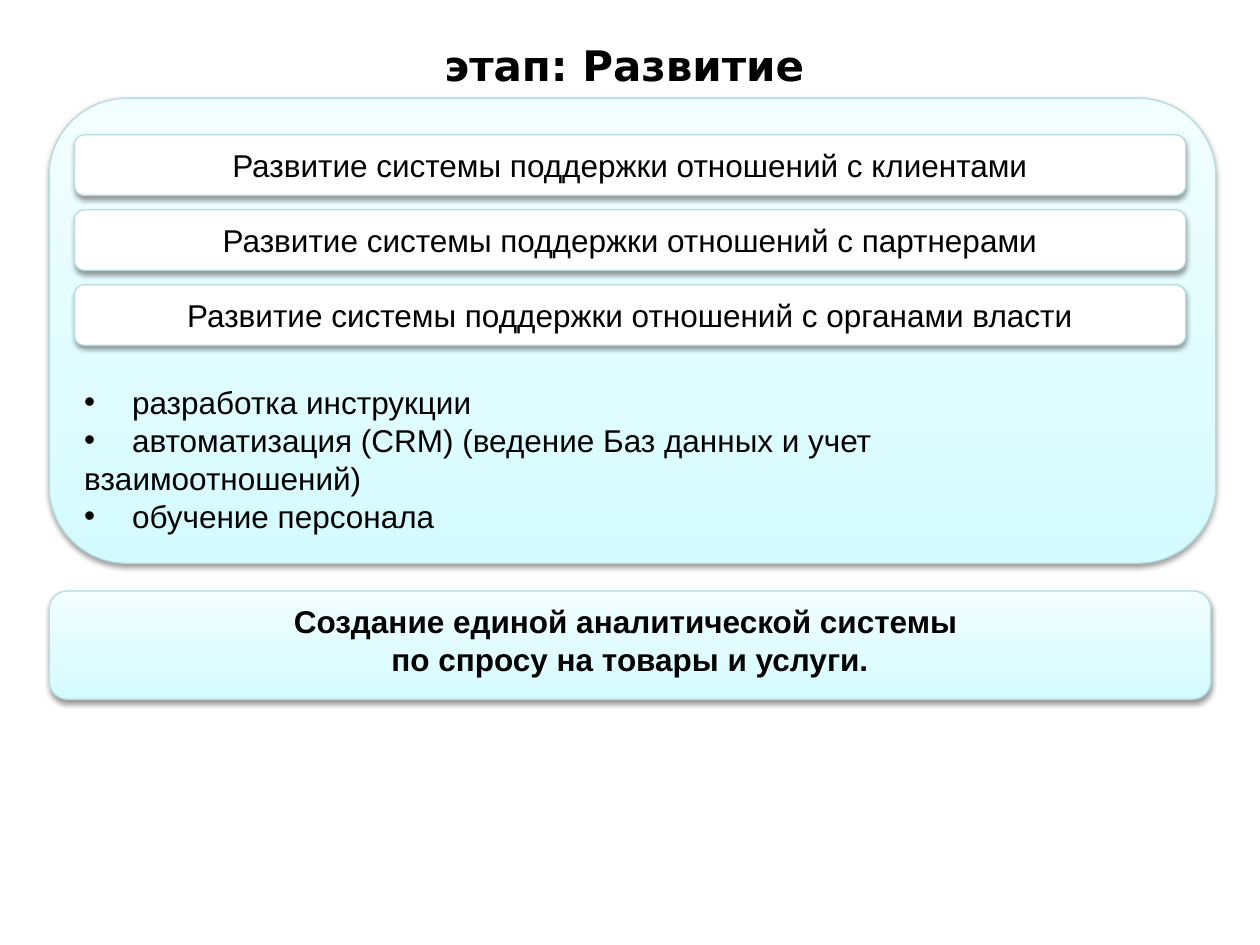
from lxml.etree import SubElement
from pptx import Presentation
from pptx.dml.color import RGBColor
from pptx.enum.shapes import MSO_SHAPE
from pptx.enum.text import MSO_ANCHOR, PP_ALIGN
from pptx.oxml.ns import qn
from pptx.util import Inches, Pt

BLACK, WHITE, EDGE = "000000", "FFFFFF", "B6DCDF"
GRADIENT = [(0, "D3FBFF"), (35, "DFFCFF"), (100, "F2FEFF")]
DIRECTIONS = [
    "Развитие системы поддержки отношений с клиентами",
    "Развитие системы поддержки отношений с партнерами",
    "Развитие системы поддержки отношений с органами власти",
]
# Each task line with whether it carries a bullet
TASKS = [
    ("разработка инструкции", True),
    ("автоматизация (CRM) (ведение Баз данных и учет", True),
    ("взаимоотношений)", False),
    ("обучение персонала", True),
]
RESULT = ["Создание единой аналитической системы ", "по спросу на товары и услуги."]


def color(value):
    return RGBColor.from_string(value)


def add_text(paragraph, text, align=PP_ALIGN.CENTER, size=18, font="Arial", bold=False):
    paragraph.alignment = align
    run = paragraph.add_run()
    run.text = text
    run.font.size, run.font.name, run.font.bold = Pt(size), font, bold
    run.font.color.rgb = color(BLACK)


def next_paragraph(frame, index):
    return frame.paragraphs[0] if index == 0 else frame.add_paragraph()


def add_hanging_indent(paragraph, bulleted):
    props = paragraph._p.get_or_add_pPr()
    props.set("marL", str(Inches(0.38)))
    props.set("indent", str(-Inches(0.38)))
    if bulleted:
        SubElement(props, qn("a:buFont"), typeface="Arial")
        SubElement(props, qn("a:buChar"), char="•")


def fill_gradient(shape):
    shape.fill.gradient()
    shape.fill.gradient_angle = 90
    stops = shape._element.spPr.find(qn("a:gradFill")).find(qn("a:gsLst"))
    for stop in list(stops):
        stops.remove(stop)
    for position, value in GRADIENT:
        stop = SubElement(stops, qn("a:gs"), pos=str(position * 1000))
        SubElement(stop, qn("a:srgbClr"), val=value)


def add_soft_shadow(shape):
    shape.shadow.inherit = False
    effects = shape._element.spPr.find(qn("a:effectLst"))
    shadow = SubElement(effects, qn("a:outerShdw"), blurRad=str(Pt(3.1)),
                        dist=str(Pt(1.6)), dir="5400000", rotWithShape="0")
    tone = SubElement(shadow, qn("a:srgbClr"), val=BLACK)
    SubElement(tone, qn("a:alpha"), val="38000")


def add_card(slide, box, anchor, solid=None):
    card = slide.shapes.add_shape(MSO_SHAPE.ROUNDED_RECTANGLE, *map(Inches, box))
    if solid:
        card.fill.solid()
        card.fill.fore_color.rgb = color(solid)
    else:
        fill_gradient(card)
    card.line.color.rgb = color(EDGE)
    card.line.width = Pt(0.75)
    add_soft_shadow(card)
    card.text_frame.word_wrap = True
    card.text_frame.vertical_anchor = anchor
    return card.text_frame


def place_title(slide, box):
    title = slide.shapes.title
    title.left, title.top, title.width, title.height = map(Inches, box)
    title.text_frame.vertical_anchor = MSO_ANCHOR.MIDDLE
    add_text(title.text_frame.paragraphs[0], "этап: Развитие",
             size=24, font="DejaVu Sans", bold=True)


def place_development(slide, box):
    left, top, width, _ = box
    # Panel with the task list at its foot
    tasks = add_card(slide, box, MSO_ANCHOR.BOTTOM)
    for index, (text, bulleted) in enumerate(TASKS):
        paragraph = next_paragraph(tasks, index)
        add_text(paragraph, text, PP_ALIGN.LEFT)
        add_hanging_indent(paragraph, bulleted)
    # Stack of white direction bars
    margin, first_row, pitch, bar_height = 0.2, 0.29, 0.595, 0.48
    for row, text in enumerate(DIRECTIONS):
        bar = add_card(slide, (left + margin, top + first_row + row * pitch,
                               width - 2.2 * margin, bar_height),
                       MSO_ANCHOR.MIDDLE, WHITE)
        add_text(bar.paragraphs[0], text)


def place_result(slide, box):
    result = add_card(slide, box, MSO_ANCHOR.TOP)
    for index, text in enumerate(RESULT):
        add_text(next_paragraph(result, index), text, bold=True)


def main():
    deck = Presentation()
    deck.slide_width, deck.slide_height = Inches(10), Inches(7.5)
    slide = deck.slides.add_slide(deck.slide_layouts[5])
    place_title(slide, (0.27, 0.26, 9.37, 0.5))
    place_development(slide, (0.39, 0.78, 9.26, 3.69))
    place_result(slide, (0.39, 4.69, 9.22, 0.86))
    deck.save("out.pptx")


if __name__ == "__main__":
    main()
